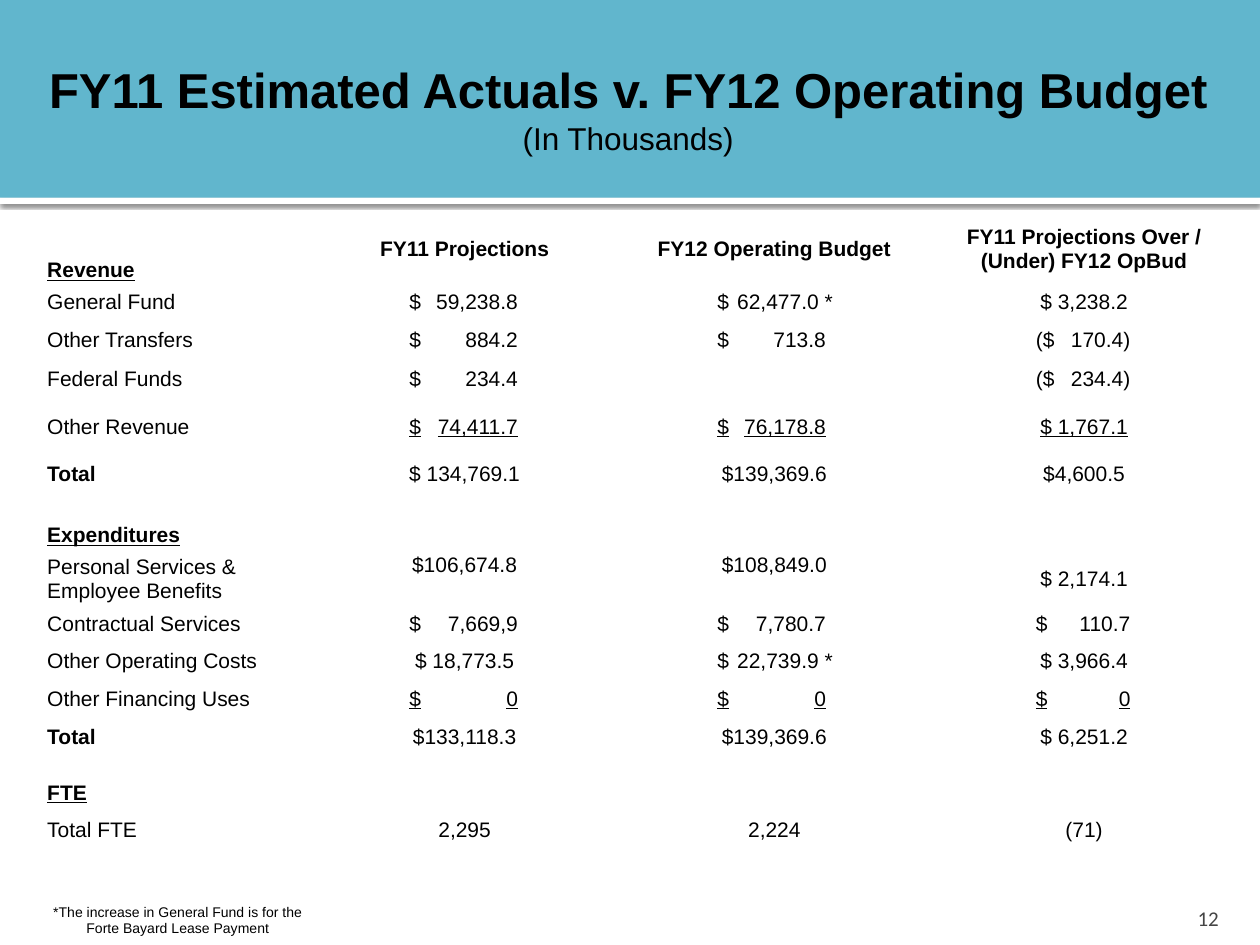
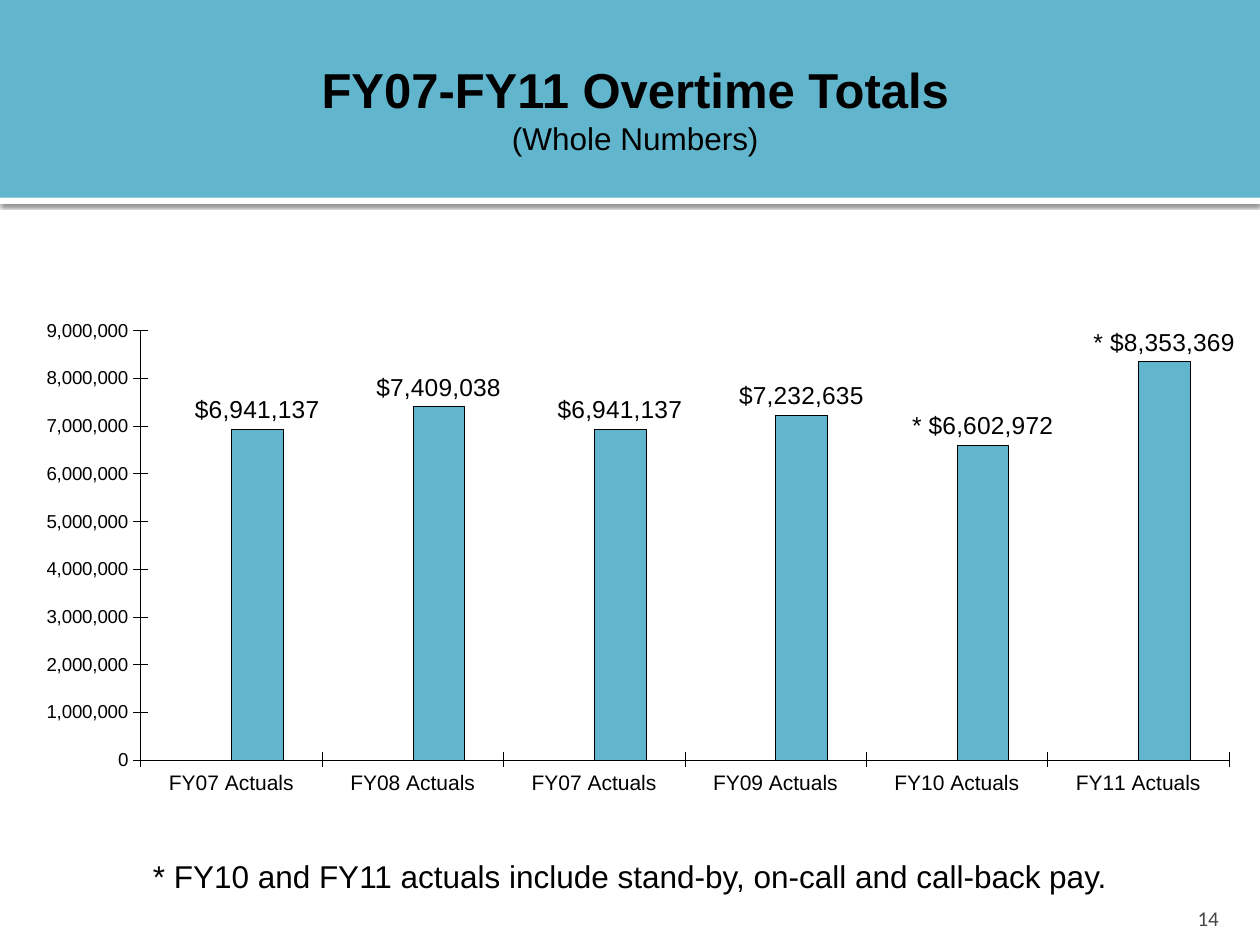
from dataclasses import dataclass

from lxml import etree
from pptx import Presentation
from pptx.chart.data import CategoryChartData
from pptx.dml.color import RGBColor
from pptx.enum.chart import XL_CHART_TYPE, XL_LABEL_POSITION, XL_TICK_MARK
from pptx.enum.shapes import MSO_SHAPE
from pptx.enum.text import MSO_ANCHOR, MSO_AUTO_SIZE, PP_ALIGN
from pptx.oxml.ns import qn
from pptx.util import Pt

LEFT, CENTER, RIGHT = PP_ALIGN.LEFT, PP_ALIGN.CENTER, PP_ALIGN.RIGHT
TOP, MIDDLE, BOTTOM = MSO_ANCHOR.TOP, MSO_ANCHOR.MIDDLE, MSO_ANCHOR.BOTTOM
NO_AUTOFIT = MSO_AUTO_SIZE.NONE
RECTANGLE = MSO_SHAPE.RECTANGLE
CLUSTERED = XL_CHART_TYPE.COLUMN_CLUSTERED
ABOVE_BAR = XL_LABEL_POSITION.OUTSIDE_END
TICK_CROSS = XL_TICK_MARK.CROSS

COLORS = {"teal": "61B6CD", "white": "FFFFFF", "black": "000000",
          "gray": "454545", "lilac": "9999FF"}
FONT = "Arial"
NUMBER_FONT = "Calibri"
TITLE_ONLY = 5
SLIDE_W, SLIDE_H = 720, 540
BAND_H, RULE_H = 113, 3.6

COLUMN_W = 177
LABEL_INDENT = 27
# Where the dollar sign starts and the number ends in each value column.
LEDGER_EDGES = [(57, 119), (56, 118), (61, 115)]
STAR_OVERHANG = 4


@dataclass
class Row:
    """One table row; a bar in a value separates the dollar sign from the number."""
    height: float
    label: str = ""
    values: tuple = ("", "", "")
    kind: str = "item"
    ruled: bool = False


BUDGET_ROWS = [
    Row(39, "Revenue", ("FY11 Projections", "FY12 Operating Budget",
                        "FY11 Projections Over / (Under) FY12 OpBud"), "header"),
    Row(22, "General Fund", ("$|59,238.8", "$|62,477.0 *", "$ 3,238.2")),
    Row(21.6, "Other Transfers", ("$|884.2", "$|713.8", "($|170.4)")),
    Row(21.6, "Federal Funds", ("$|234.4", "", "($|234.4)")),
    Row(32.4, "Other Revenue", ("$|74,411.7", "$|76,178.8", "$ 1,767.1"), ruled=True),
    Row(21.6, "Total", ("$ 134,769.1", "$139,369.6", "$4,600.5"), "total"),
    Row(34.5, "Expenditures", kind="section"),
    Row(28.1, "Personal Services & Employee Benefits",
        ("$106,674.8", "$108,849.0", "$ 2,174.1"), "two-line"),
    Row(21.6, "Contractual Services", ("$|7,669,9", "$|7,780.7", "$|110.7")),
    Row(21.6, "Other Operating Costs", ("$ 18,773.5", "$|22,739.9 *", "$ 3,966.4")),
    Row(21.6, "Other Financing Uses", ("$|0", "$|0", "$|0"), ruled=True),
    Row(21.6, "Total", ("$133,118.3", "$139,369.6", "$ 6,251.2"), "total"),
    Row(28.1, "FTE", kind="section"),
    Row(28.8, "Total FTE", ("2,295", "2,224", "(71)")),
    Row(26),
    Row(21.6, "*The increase in General Fund is for the Forte Bayard Lease Payment",
        kind="footnote"),
]

OVERTIME = [("FY07 Actuals", 6941137), ("FY08 Actuals", 7409038),
            ("FY07 Actuals", 6941137), ("FY09 Actuals", 7232635),
            ("FY10 Actuals", 6602972), ("FY11 Actuals", 8353369)]
STARRED_LABELS = {4: "* $6,602,972", 5: "* $8,353,369"}


def rgb(name):
    return RGBColor.from_string(COLORS[name])


def style_font(font, size, bold=False, underline=False, color="black", name=FONT):
    font.name, font.size = name, Pt(size)
    font.bold, font.underline = bold, underline
    font.color.rgb = rgb(color)


def add_run(paragraph, text, size, align=CENTER, **style):
    paragraph.alignment = align
    run = paragraph.add_run()
    run.text = text
    style_font(run.font, size, **style)


def add_text(slide, box, text, size, align=CENTER, anchor=TOP, **style):
    frame = slide.shapes.add_textbox(*map(Pt, box)).text_frame
    frame.word_wrap = True
    frame.vertical_anchor = anchor
    add_run(frame.paragraphs[0], text, size, align, **style)
    return frame


def add_band(slide, box, color):
    """Place a plain strip behind the title."""
    band = slide.shapes.add_shape(RECTANGLE, *map(Pt, box))
    band.shadow.inherit = False
    band.fill.solid()
    band.fill.fore_color.rgb = rgb(color)
    band.line.fill.background()
    slide.shapes.title.element.addprevious(band.element)
    return band


def add_soft_shadow(shape):
    effects = shape.element.spPr.find(qn("a:effectLst"))
    shadow = etree.SubElement(effects, qn("a:outerShdw"), blurRad=str(Pt(2.5)),
                              dist=str(Pt(0.8)), dir="5400000", rotWithShape="0")
    shade = etree.SubElement(shadow, qn("a:srgbClr"), val=COLORS["black"])
    etree.SubElement(shade, qn("a:alpha"), val="60000")


def add_base_slide(deck, title_box, heading, unit, number):
    """Add a slide with the shared band, two-line title and slide number."""
    slide = deck.slides.add_slide(deck.slide_layouts[TITLE_ONLY])
    add_soft_shadow(add_band(slide, (0, BAND_H, SLIDE_W, RULE_H), "white"))
    add_band(slide, (0, 0, SLIDE_W, BAND_H), "teal")

    title = slide.shapes.title
    title.left, title.top, title.width, title.height = map(Pt, title_box)
    frame = title.text_frame
    frame.word_wrap = True
    frame.auto_size = NO_AUTOFIT
    frame.vertical_anchor = MIDDLE
    add_run(frame.paragraphs[0], heading, 28, bold=True)
    add_run(frame.add_paragraph(), unit, 18)

    page = add_text(slide, (646, 510, 57.6, 21.6), number, 12, RIGHT, BOTTOM,
                    color="gray", name=NUMBER_FONT)
    page.margin_bottom = 0
    return slide


def prepare_cell(cell, indent=0.7, anchor=MIDDLE):
    cell.fill.background()
    cell.margin_left, cell.margin_right = Pt(indent), Pt(0.7)
    cell.margin_top, cell.margin_bottom = Pt(0.7), 0
    cell.vertical_anchor = anchor
    return cell.text_frame.paragraphs[0]


def fill_label(cell, row):
    heading = row.kind in ("header", "section")
    paragraph = prepare_cell(cell, LABEL_INDENT, BOTTOM if heading else MIDDLE)
    if not row.label:
        paragraph.line_spacing = Pt(12)
        return
    if row.label == "Expenditures":
        cell.margin_bottom = Pt(3)
    footnote = row.kind == "footnote"
    add_run(paragraph, row.label, 8 if footnote else 12,
            CENTER if footnote else LEFT,
            bold=heading or row.kind == "total", underline=heading)


def fill_value(cell, row, value, edges):
    paragraph = prepare_cell(cell)
    if not value:
        paragraph.line_spacing = Pt(12)
        return
    if row.kind == "header":
        cell.margin_left = cell.margin_right = Pt(12)
    if row.kind == "two-line" and edges != LEDGER_EDGES[-1]:
        cell.vertical_anchor = TOP
    align = CENTER
    if "|" in value:
        start, end = edges
        if value.endswith("*"):
            end += STAR_OVERHANG
        align = LEFT
        cell.margin_left = Pt(start)
        tabs = etree.SubElement(paragraph._p.get_or_add_pPr(), qn("a:tabLst"))
        etree.SubElement(tabs, qn("a:tab"), pos=str(Pt(end - start)), algn="r")
    add_run(paragraph, value.replace("|", "\t"), 12, align,
            bold=row.kind == "header", underline=row.ruled)


def add_budget_table(slide, left, top):
    columns = 1 + len(LEDGER_EDGES)
    height = sum(row.height for row in BUDGET_ROWS)
    table = slide.shapes.add_table(len(BUDGET_ROWS), columns, Pt(left), Pt(top),
                                   Pt(columns * COLUMN_W), Pt(height)).table
    table.first_row = table.horz_banding = False
    for column in table.columns:
        column.width = Pt(COLUMN_W)
    for index, row in enumerate(BUDGET_ROWS):
        table.rows[index].height = Pt(row.height)
        fill_label(table.cell(index, 0), row)
        for column, (value, edges) in enumerate(zip(row.values, LEDGER_EDGES), 1):
            fill_value(table.cell(index, column), row, value, edges)


def style_axis(axis, size):
    axis.has_major_gridlines = False
    axis.major_tick_mark = TICK_CROSS
    style_font(axis.tick_labels.font, size)
    axis.format.line.color.rgb = rgb("black")
    axis.format.line.width = Pt(0.28)


def style_series(series, color, line_width):
    series.format.fill.solid()
    series.format.fill.fore_color.rgb = rgb(color)
    series.format.line.color.rgb = rgb("black")
    series.format.line.width = Pt(line_width)


def set_plot_area(chart, x, y, w, h):
    """Fix the inner plot area, given as shares of the chart."""
    area = chart.element.find(".//" + qn("c:plotArea"))
    layout = area.find(qn("c:layout"))
    if layout is None:
        layout = etree.Element(qn("c:layout"))
        area.insert(0, layout)
    manual = etree.SubElement(layout, qn("c:manualLayout"))
    for tag, value in (("layoutTarget", "inner"), ("xMode", "edge"), ("yMode", "edge"),
                       ("x", x), ("y", y), ("w", w), ("h", h)):
        etree.SubElement(manual, qn("c:" + tag), val=str(value))


def add_overtime_chart(slide, box):
    data = CategoryChartData()
    data.categories = [year for year, _ in OVERTIME]
    data.add_series("Series 1", [None] * len(OVERTIME))
    data.add_series("Series 2", [total for _, total in OVERTIME])
    chart = slide.shapes.add_chart(CLUSTERED, *map(Pt, box), data).chart
    chart.has_legend = chart.has_title = False
    style_font(chart.font, 10.7)
    set_plot_area(chart, 0.098, 0.069, 0.891, 0.807)

    style_axis(chart.category_axis, 12)
    dollars = chart.value_axis
    style_axis(dollars, 10.7)
    dollars.minimum_scale, dollars.maximum_scale = 0, 9000000
    dollars.major_unit = 1000000
    dollars.tick_labels.number_format = "#,##0"
    dollars.tick_labels.number_format_is_linked = False

    plot = chart.plots[0]
    plot.gap_width, plot.overlap = 150, 0
    plot.vary_by_categories = False
    spacer, totals = plot.series
    style_series(spacer, "lilac", 1.13)
    style_series(totals, "teal", 0.25)

    labels = totals.data_labels
    labels.show_value = True
    labels.number_format = '"$"#,##0'
    labels.number_format_is_linked = False
    labels.position = ABOVE_BAR
    style_font(labels.font, 14)
    for index, text in STARRED_LABELS.items():
        label = totals.points[index].data_label
        add_run(label.text_frame.paragraphs[0], text, 14)
        label.position = ABOVE_BAR


def build_budget_slide(deck):
    slide = add_base_slide(deck, (11, 30.2, 696, 63.4),
                           "FY11 Estimated Actuals v. FY12 Operating Budget",
                           "(In Thousands)", "12")
    add_budget_table(slide, 0, 122.4)


def build_overtime_slide(deck):
    slide = add_base_slide(deck, (36, 30.2, 654, 63.4),
                           "FY07-FY11 Overtime Totals", "(Whole Numbers)", "14")
    add_overtime_chart(slide, (12, 168, 698, 304))
    add_text(slide, (54, 486, 612, 29),
             "* FY10 and FY11 actuals include stand-by, on-call and call-back pay.", 18)


def main():
    deck = Presentation()
    deck.slide_width, deck.slide_height = Pt(SLIDE_W), Pt(SLIDE_H)
    build_budget_slide(deck)
    build_overtime_slide(deck)
    deck.save("out.pptx")


if __name__ == "__main__":
    main()
